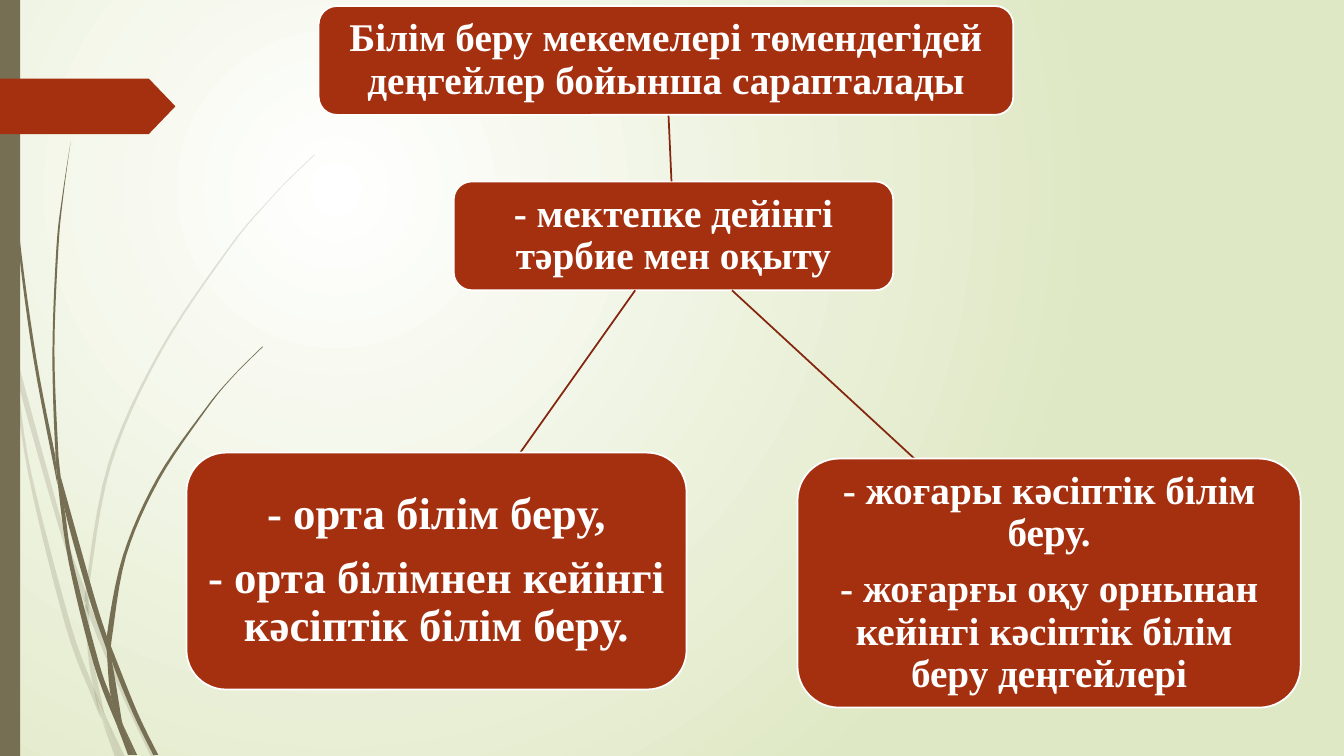
from lxml import etree
from pptx import Presentation
from pptx.dml.color import RGBColor
from pptx.enum.shapes import MSO_CONNECTOR, MSO_SHAPE
from pptx.enum.text import MSO_ANCHOR, PP_ALIGN
from pptx.oxml.ns import qn
from pptx.util import Inches, Pt

RECTANGLE = MSO_SHAPE.RECTANGLE
ROUNDED = MSO_SHAPE.ROUNDED_RECTANGLE
TAG = MSO_SHAPE.PENTAGON
STRAIGHT = MSO_CONNECTOR.STRAIGHT
CENTER = PP_ALIGN.CENTER
MIDDLE = MSO_ANCHOR.MIDDLE

COLORS = {"olive": "766F54", "rust": "A53010", "link": "84260D",
          "white": "FFFFFF", "sage": "DFE8C4"}
FONT = "Times New Roman"

# Grass pieces: points along one edge, then points back along the other
PALE_GRASS = [
    ([(0.11, 3.5), (0.09, 3.22), (0, 2.82)], [(0, 2.99), (0.1, 3.44), (0.11, 3.5)]),
    ([(0.14, 3.45), (0.17, 3.76), (0.58, 5.22), (0.84, 5.99)],
     [(0.85, 5.86), (0.62, 5.2), (0.14, 3.45)]),
    ([(0.88, 5.96), (0.88, 6.1), (1.23, 6.94), (1.5, 7.51)],
     [(1.55, 7.51), (1.27, 6.92), (0.92, 6.07), (0.88, 5.96)]),
    ([(1.05, 7.11), (1.19, 7.51)], [(1.24, 7.51), (1.05, 7.11)]),
    ([(0.11, 3.5), (0.28, 4.7), (0.65, 6.21), (0.92, 6.93), (1.01, 7.14)],
     [(0.99, 7.07), (0.93, 6.83), (0.7, 6.19), (0.31, 4.69), (0.17, 3.76), (0.11, 3.5)]),
    ([(0.84, 5.99), (0.87, 6.46), (0.93, 6.83), (1.05, 7.11)],
     [(1.03, 7.06), (0.91, 6.46), (0.88, 6.08), (0.84, 5.99)]),
    ([(3.12, 1.53), (2.89, 1.75), (2.68, 1.97), (2.28, 2.44), (1.58, 3.48),
      (1.07, 4.61), (0.85, 5.84), (0.88, 5.96)],
     [(0.88, 5.84), (1.1, 4.62), (1.6, 3.49), (2.29, 2.45), (2.68, 1.98),
      (2.9, 1.75), (3.12, 1.54)]),
    ([(1.01, 7.14), (1.14, 7.51)], [(1.19, 7.51), (1.01, 7.14)]),
    ([(0.85, 5.86), (0.84, 5.99), (0.88, 6.1)], [(0.88, 5.96), (0.85, 5.86)]),
    ([(0.93, 6.83), (0.99, 7.07), (1.19, 7.51)],
     [(1.19, 7.51), (1.05, 7.11), (0.93, 6.83)]),
]
DARK_GRASS = [
    ([(0.03, 0), (0.07, 1.1), (0.17, 2.33), (0.33, 3.55), (0.57, 4.81)],
     [(0.55, 4.53), (0.36, 3.55), (0.19, 2.32), (0.08, 1.09), (0.04, 0)]),
    ([(0.6, 4.72), (0.64, 5.05), (0.88, 5.92), (1.06, 6.45)],
     [(1.06, 6.31), (0.93, 5.9), (0.6, 4.72)]),
    ([(1.1, 6.41), (1.11, 6.56), (1.32, 7.08), (1.52, 7.49)],
     [(1.57, 7.49), (1.36, 7.06), (1.1, 6.41)]),
    ([(0.57, 4.77), (0.68, 5.57), (0.93, 6.59), (1.17, 7.22)],
     [(1.1, 6.91), (0.98, 6.57), (0.72, 5.56), (0.64, 5.05), (0.57, 4.77)]),
    ([(0.7, 1.41), (0.62, 1.93), (0.56, 2.45), (0.52, 3.49), (0.55, 4.49), (0.6, 4.72)],
     [(0.58, 4.53), (0.54, 3.49), (0.58, 2.45), (0.63, 1.93), (0.7, 1.41)]),
    ([(1.22, 7.19), (1.33, 7.49)], [(1.36, 7.49), (1.22, 7.19)]),
    ([(0.55, 4.49), (0.57, 4.77), (0.64, 5.05)], [(0.6, 4.72), (0.55, 4.49)]),
    ([(2.6, 3.44), (2.31, 3.73), (2.04, 4.05), (1.56, 4.74), (1.22, 5.51),
      (1.06, 6.31), (1.1, 6.41)],
     [(1.11, 6.33), (1.25, 5.52), (1.58, 4.76), (2.05, 4.06), (2.31, 3.74), (2.61, 3.44)]),
    ([(1.17, 7.22), (1.27, 7.49)], [(1.31, 7.49), (1.17, 7.22)]),
    ([(1.06, 6.45), (1.1, 6.91), (1.22, 7.19)], [(1.21, 7.16), (1.11, 6.56), (1.06, 6.45)]),
    ([(1.06, 6.31), (1.06, 6.45), (1.11, 6.56)], [(1.1, 6.41), (1.06, 6.31)]),
    ([(1.1, 6.91), (1.17, 7.22), (1.3, 7.49)], [(1.33, 7.49), (1.22, 7.19), (1.1, 6.91)]),
]

# Diagram boxes: left, top, width, height, text size, inset, paragraphs
BOXES = [
    ((4.5, 1.8, 4.36, 1.08), 28, 0.08, ["- мектепке дейінгі тәрбие мен оқыту"]),
    ((3.16, 0.06, 6.89, 1.08), 28, 0.08,
     ["Білім беру мекемелері төмендегідей деңгейлер бойынша сарапталады"]),
    ((7.91, 4.55, 4.99, 2.47), 28, 0.08,
     ["- жоғары кәсіптік білім беру.",
      "- жоғарғы оқу орнынан кейінгі кәсіптік білім  беру деңгейлері"]),
    ((1.85, 4.49, 4.96, 2.35), 32, 0.09,
     ["- орта білім беру,", "- орта білімнен кейінгі кәсіптік білім беру."]),
]
# Links from the first box to each of the others
LINKS = [(6.66, 1.8, 6.63, 1.13), (7.26, 2.88, 9.07, 4.55),
         (6.3, 2.88, 5.16, 4.49)]


def color(name):
    return RGBColor.from_string(COLORS[name])


def paint(shape, fill, line=None):
    shape.shadow.inherit = False
    shape.fill.solid()
    shape.fill.fore_color.rgb = color(fill)
    if line:
        shape.line.color.rgb = color(line)
        shape.line.width = Pt(1.25)
    else:
        shape.line.fill.background()


def add_block(page, kind, box, fill, line=None):
    shape = page.shapes.add_shape(kind, *map(Inches, box))
    paint(shape, fill, line)
    return shape


def add_text(para, text, size=28, ink="white", bold=True):
    para.alignment = CENTER
    para.line_spacing = 0.9
    para.space_after = Pt(round(size * 0.35))
    span = para.add_run()
    span.text = text
    span.font.name = FONT
    span.font.size = Pt(size)
    span.font.bold = bold
    span.font.color.rgb = color(ink)


def smooth_edge(points, steps=6):
    """Catmull-Rom curve through the points."""
    padded = [points[0], *points, points[-1]]
    curve = [points[0]]
    for a, b, c, d in zip(padded, padded[1:], padded[2:], padded[3:]):
        for step in range(1, steps + 1):
            t = step / steps
            curve.append(tuple(
                0.5 * (2 * q + (r - p) * t + (2 * p - 5 * q + 4 * r - s) * t**2
                       + (3 * q - p - 3 * r + s) * t**3)
                for p, q, r, s in zip(a, b, c, d)))
    return curve


def add_grass(page, pieces, opacity=100):
    for edges in pieces:
        outline = [(Inches(x), Inches(y))
                   for edge in edges for x, y in smooth_edge(edge)]
        builder = page.shapes.build_freeform(*outline[0])
        builder.add_line_segments(outline[1:], close=True)
        blade = builder.convert_to_shape()
        paint(blade, "olive")
        if opacity < 100:
            ink = blade.fill._xPr.find(".//" + qn("a:srgbClr"))
            etree.SubElement(ink, qn("a:alpha"), val=str(opacity * 1000))


def add_background(page):
    fill = page.background.fill
    fill.gradient()
    for stop, name in zip(fill.gradient_stops, ("white", "sage")):
        stop.color.rgb = color(name)
    gradient = page.element.find(".//" + qn("a:gradFill"))
    circle = etree.Element(qn("a:path"), path="circle")
    etree.SubElement(circle, qn("a:fillToRect"), l="50000", t="50000",
                     r="100000", b="100000")
    gradient.replace(gradient.find(qn("a:lin")), circle)


def add_decoration(page, height):
    add_grass(page, PALE_GRASS, opacity=20)
    add_grass(page, DARK_GRASS)
    add_block(page, RECTANGLE, (0, 0, 0.2, height), "olive")
    tag = add_block(page, TAG, (0, 0.78, 1.74, 0.55), "rust")
    tag.adjustments[0] = 0.48


def add_link(page, ends):
    link = page.shapes.add_connector(STRAIGHT, *map(Inches, ends))
    link.line.color.rgb = color("link")
    link.line.width = Pt(1.25)
    etree.SubElement(link._element.spPr, qn("a:effectLst"))


def add_diagram_box(page, box, size, inset, texts):
    frame = add_block(page, ROUNDED, box, "rust", "white").text_frame
    frame.word_wrap = True
    frame.vertical_anchor = MIDDLE
    frame.margin_left = frame.margin_right = Inches(inset)
    frame.margin_top = frame.margin_bottom = Inches(inset)
    for index, text in enumerate(texts):
        para = frame.add_paragraph() if index else frame.paragraphs[0]
        add_text(para, text, size=size)


def main():
    deck = Presentation()
    deck.slide_width, deck.slide_height = Inches(13.33), Inches(7.5)
    page = deck.slides.add_slide(deck.slide_layouts[6])
    add_background(page)
    add_decoration(page, 7.5)
    add_diagram_box(page, *BOXES[0])
    for ends, box in zip(LINKS, BOXES[1:]):
        add_link(page, ends)
        add_diagram_box(page, *box)
    deck.save("out.pptx")


if __name__ == "__main__":
    main()
